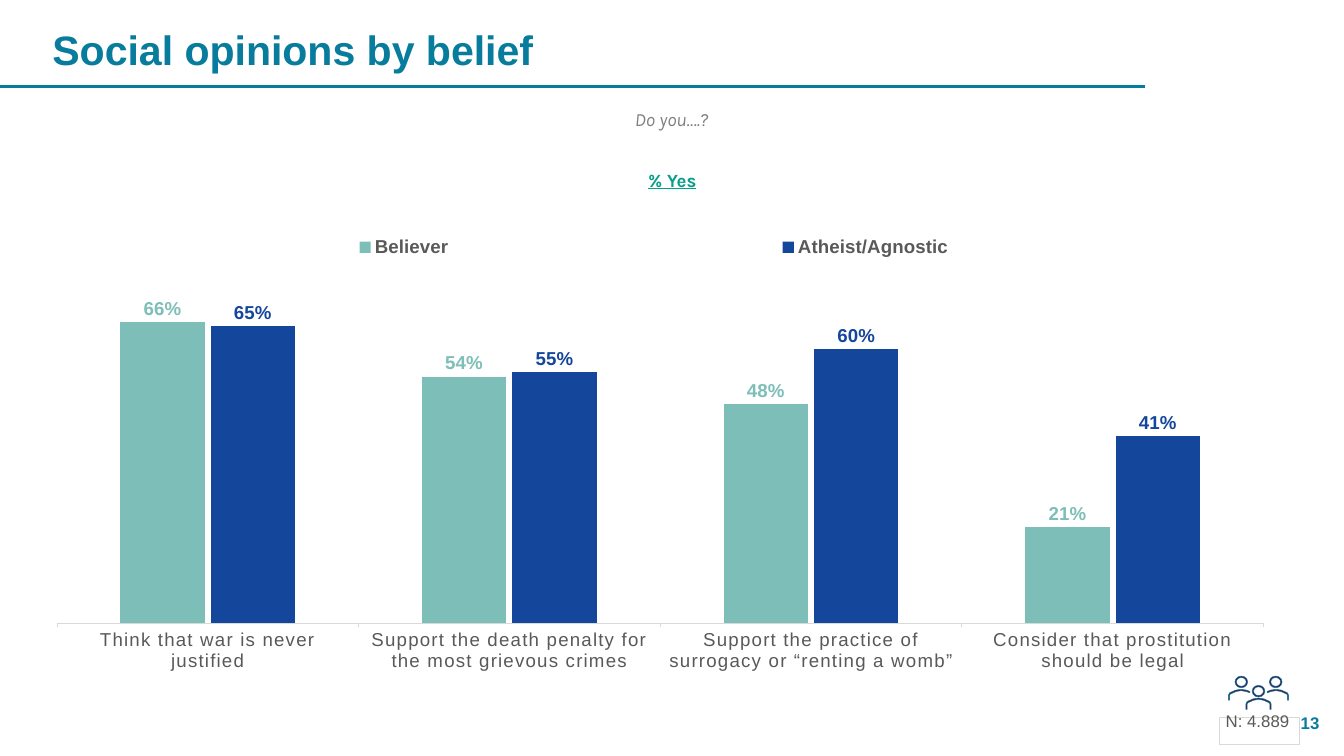
import pptx
import pptx.chart.data
import pptx.dml.color
import pptx.enum.chart
import pptx.enum.shapes
import pptx.enum.text
import pptx.oxml
import pptx.oxml.ns
import pptx.util
from dataclasses import dataclass

Cm, Pt = pptx.util.Cm, pptx.util.Pt
ALIGN = pptx.enum.text.PP_ALIGN
ANCHOR = pptx.enum.text.MSO_ANCHOR
SHAPE = pptx.enum.shapes.MSO_SHAPE


@dataclass(frozen=True)
class Theme:
    teal: str = "077C9C"
    green: str = "069E8C"
    believer: str = "7DBEB8"
    atheist: str = "14469C"
    text: str = "595959"
    muted: str = "7F7F7F"
    border: str = "D9D9D9"
    white: str = "FFFFFF"
    icon: str = "660039"
    heading: int = 44
    body: int = 20
    small: int = 18
    font: str = "Arial"
    accent_font: str = "Karla"


def rgb(value):
    return pptx.dml.color.RGBColor.from_string(value)


def set_attributes(target, values):
    for name, value in values.items():
        setattr(target, name, value)


def set_font(font, color, **values):
    set_attributes(font, values)
    font.color.rgb = rgb(color)


def set_layout(parent, position, x, y, w, h, inner=False):
    """Place a chart part by fractions of the chart area."""
    for old in parent.findall(pptx.oxml.ns.qn("c:layout")):
        parent.remove(old)
    target = '<c:layoutTarget val="inner"/>' if inner else ""
    fractions = "".join(f'<c:{tag} val="{value}"/>'
                        for tag, value in zip("xywh", (x, y, w, h)))
    parent.insert(position, pptx.oxml.parse_xml(
        f'<c:layout {pptx.oxml.ns.nsdecls("c")}><c:manualLayout>{target}'
        f'<c:xMode val="edge"/><c:yMode val="edge"/>{fractions}'
        '</c:manualLayout></c:layout>'))


class SlideBuilder:
    def __init__(self, slide, theme):
        self.slide = slide
        self.theme = theme

    def paint(self, shape, fill, line, width):
        shape.shadow.inherit = False
        shape.fill.solid()
        shape.fill.fore_color.rgb = rgb(fill)
        shape.line.color.rgb = rgb(line)
        shape.line.width = Pt(width)

    def fill_text(self, shape, text, color, size, align=ALIGN.LEFT,
                  anchor=ANCHOR.MIDDLE, font=None, frame_values=None, **style):
        frame = shape.text_frame
        set_attributes(frame, {"word_wrap": True, "vertical_anchor": anchor,
                               **(frame_values or {})})
        paragraph = frame.paragraphs[0]
        paragraph.alignment = align
        run = paragraph.add_run()
        run.text = text
        set_font(run.font, color, size=Pt(size),
                 name=font or self.theme.font, **style)

    def text(self, box, text, color, size, **options):
        shape = self.slide.shapes.add_textbox(*map(Cm, box))
        self.fill_text(shape, text, color, size, **options)

    def rule(self, x1, y1, x2, y2, color, width):
        line = self.slide.shapes.add_connector(
            pptx.enum.shapes.MSO_CONNECTOR.STRAIGHT, Cm(x1), Cm(y1), Cm(x2), Cm(y2))
        line.line.color.rgb = rgb(color)
        line.line.width = Pt(width)
        line._element.spPr.append(pptx.oxml.parse_xml(
            f'<a:effectLst {pptx.oxml.ns.nsdecls("a")}/>'))

    def box(self, box, fill, line, width):
        shape = self.slide.shapes.add_shape(SHAPE.RECTANGLE, *map(Cm, box))
        self.paint(shape, fill, line, width)
        return shape

    def head(self, center_x, top):
        ring = self.slide.shapes.add_shape(
            SHAPE.DONUT, Cm(center_x - 0.24), Cm(top), Cm(0.48), Cm(0.44))
        ring.adjustments[0] = 0.12
        self.paint(ring, self.theme.icon, self.theme.teal, 0.59)

    def shoulders(self, axis, points):
        outline = [(Cm(axis + x), Cm(y)) for x, y in points]
        builder = self.slide.shapes.build_freeform(*outline[0])
        builder.add_line_segments(outline[1:], close=True)
        self.paint(builder.convert_to_shape(), self.theme.icon, self.theme.teal, 0.59)

    def column_chart(self, box, categories, series):
        theme = self.theme
        data = pptx.chart.data.CategoryChartData(number_format="0%")
        data.categories = categories
        for name, values, _ in series:
            data.add_series(name, values)
        chart = self.slide.shapes.add_chart(
            pptx.enum.chart.XL_CHART_TYPE.COLUMN_CLUSTERED, *map(Cm, box), data).chart
        chart.has_title = False
        set_font(chart.font, theme.text, size=Pt(theme.body), name=theme.font)

        # Axes
        set_attributes(chart.value_axis, {
            "visible": False, "has_major_gridlines": False,
            "minimum_scale": 0, "maximum_scale": 0.7})
        axis = chart.category_axis
        axis.major_tick_mark = pptx.enum.chart.XL_TICK_MARK.OUTSIDE
        axis.format.line.color.rgb = rgb(theme.border)
        axis.format.line.width = Pt(0.75)
        set_font(axis.tick_labels.font, theme.text, size=Pt(theme.body), name=theme.font)
        axis._element.xpath("./c:txPr//a:defRPr")[0].set("spc", "120")

        # Columns and their labels
        plot = chart.plots[0]
        set_attributes(plot, {"gap_width": 150, "overlap": -7,
                              "vary_by_categories": False})
        for column, (_, _, color) in zip(plot.series, series):
            column.format.fill.solid()
            column.format.fill.fore_color.rgb = rgb(color)
            labels = column.data_labels
            set_attributes(labels, {
                "show_value": True, "number_format": "0%",
                "number_format_is_linked": False,
                "position": pptx.enum.chart.XL_LABEL_POSITION.OUTSIDE_END})
            set_font(labels.font, color, size=Pt(theme.body), name=theme.font, bold=True)

        # Legend and plot area
        chart.has_legend = True
        set_attributes(chart.legend, {
            "position": pptx.enum.chart.XL_LEGEND_POSITION.TOP,
            "include_in_layout": False})
        set_font(chart.legend.font, theme.text, size=Pt(theme.body),
                 name=theme.font, bold=True)
        set_layout(chart.legend._element, 1, 0.01, 0.03, 0.98, 0.08)
        plot_area = chart._chartSpace.xpath(".//c:plotArea")[0]
        set_layout(plot_area, 0, 0.03, 0.19, 0.95, 0.68, inner=True)


def mirrored(points):
    return [(-x, y) for x, y in points]


def main():
    theme = Theme()
    deck = pptx.Presentation()
    deck.slide_width, deck.slide_height = Cm(50.8), Cm(28.58)
    page = SlideBuilder(deck.slides.add_slide(deck.slide_layouts[6]), theme)

    # Heading rule and page number
    page.rule(0, 3.28, 43.28, 3.28, theme.teal, 3)
    page.text((44.2, 26.8, 5.92, 1.02), "13", theme.teal, theme.small,
              align=ALIGN.RIGHT, bold=True)

    # Question and measure
    centered = {"align": ALIGN.CENTER, "anchor": ANCHOR.TOP, "font": theme.accent_font}
    page.text((8, 3.94, 34.77, 1.12), "Do you….?", theme.muted, theme.body,
              italic=True, **centered)

    # Opinions by belief
    page.column_chart(
        (0.71, 8.1, 48.01, 17.78),
        ["Think that war is never justified",
         "Support the death penalty for the most grievous crimes",
         "Support the practice of surrogacy or “renting a womb”",
         "Consider that prostitution should be legal"],
        [("Believer", (0.66, 0.54, 0.48, 0.21), theme.believer),
         ("Atheist/Agnostic", (0.65, 0.55, 0.6, 0.41), theme.atheist)])
    page.text((19.94, 6.25, 10.95, 1.12), "% Yes", theme.green, theme.body,
              bold=True, underline=True, **centered)

    # People icon: side figures mirror each other around the middle one
    axis = 47.57
    for offset, top in ((-0.65, 25.56), (0.65, 25.56), (0, 25.91)):
        page.head(axis + offset, top)
    side = [(-0.33, 26.19), (-0.33, 26.14), (-0.46, 26.09), (-0.66, 26.06),
            (-0.86, 26.09), (-1.09, 26.19), (-1.14, 26.29), (-1.14, 26.47),
            (-1.09, 26.47), (-1.09, 26.29), (-1.07, 26.24), (-0.84, 26.14),
            (-0.66, 26.11), (-0.48, 26.14)]
    half = [(0, 26.39), (-0.2, 26.42), (-0.43, 26.52), (-0.48, 26.62),
            (-0.48, 26.82), (-0.43, 26.82), (-0.43, 26.62), (-0.41, 26.57),
            (-0.18, 26.47), (0, 26.44)]
    for outline in (side, mirrored(side), half + mirrored(half[-2:0:-1])):
        page.shoulders(axis, outline)

    # Sample size
    sample = page.box((46.08, 27.13, 3.02, 1.02), theme.white, theme.border, 0.5)
    page.fill_text(sample, "N: 4.889", theme.text, theme.small,
                   frame_values={"margin_top": Cm(0), "margin_bottom": Cm(0.76)})

    # Title
    page.text((1.73, 0.99, 38.48, 1.75), "Social opinions by belief",
              theme.teal, theme.heading, bold=True)

    deck.save("out.pptx")


if __name__ == "__main__":
    main()
